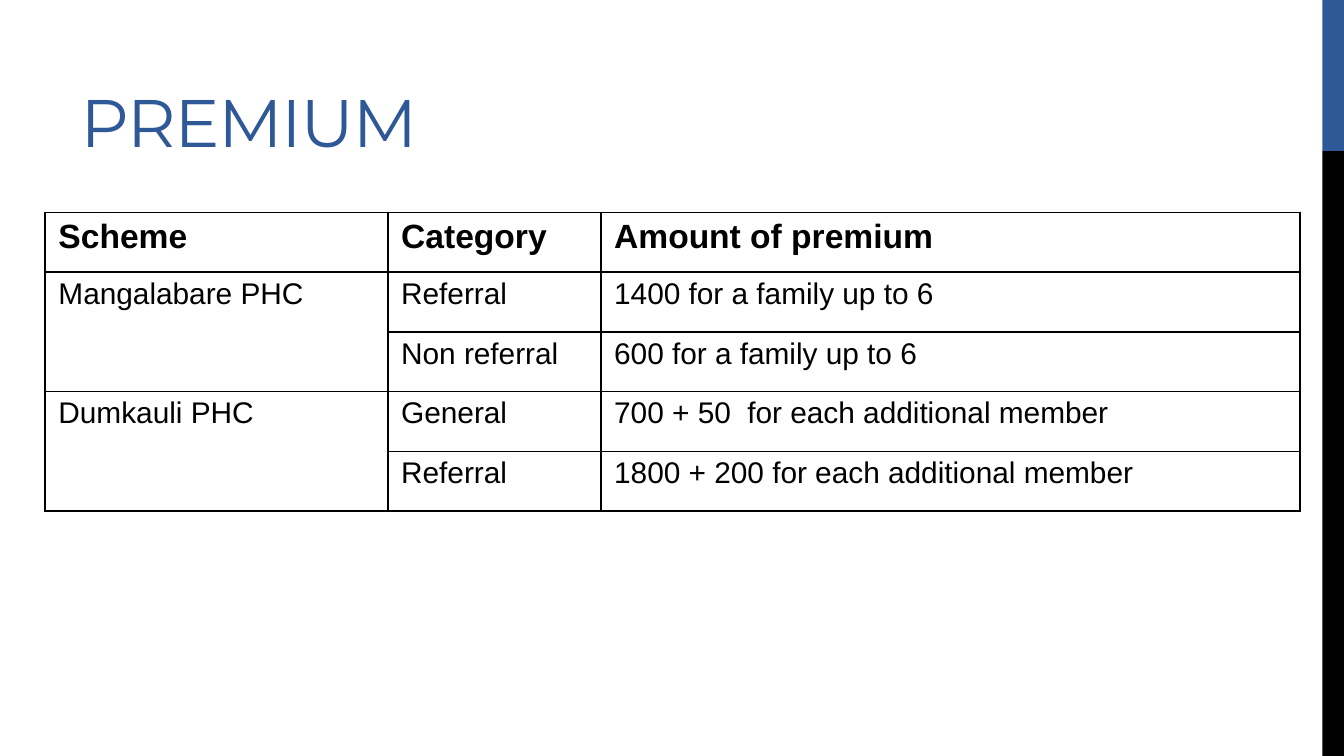
from pptx import Presentation
from pptx.dml.color import RGBColor
from pptx.enum.shapes import MSO_SHAPE as Shape
from pptx.enum.text import MSO_ANCHOR as Anchor, PP_ALIGN as Align
from pptx.oxml import parse_xml
from pptx.oxml.ns import nsdecls
from pptx.util import Pt

SCALE = 4572
BLUE = RGBColor(0x2F, 0x58, 0x97)
BLACK = RGBColor(0, 0, 0)

PREMIUMS = [
    ("Scheme", "Category", "Amount of premium"),
    ("Mangalabare PHC", "Referral", "1400 for a family up to 6"),
    ("", "Non referral", "600 for a family up to 6"),
    ("Dumkauli PHC", "General", "700 + 50  for each additional member"),
    ("", "Referral", "1800 + 200 for each additional member"),
]


def px(*lengths):
    return [length * SCALE for length in lengths]


class SlideBuilder:
    """Builds one slide in a shared style, with lengths in px."""

    title_font = "Montserrat"
    body_font = "Arial"

    def __init__(self, presentation):
        self.slide = presentation.slides.add_slide(presentation.slide_layouts[5])

    def bar(self, left, top, width, height, color):
        shape = self.slide.shapes.add_shape(Shape.RECTANGLE, *px(left, top, width, height))
        shape.shadow.inherit = False
        shape.fill.solid()
        shape.fill.fore_color.rgb = color
        shape.line.fill.background()

    def title(self, text, left, top, width, height):
        title = self.slide.shapes.title
        title.left, title.top, title.width, title.height = px(left, top, width, height)
        frame = title.text_frame
        frame.text = text
        frame.vertical_anchor = Anchor.BOTTOM
        paragraph = frame.paragraphs[0]
        paragraph.alignment = Align.LEFT
        self.style(paragraph, self.title_font, 36, BLUE)
        paragraph.runs[0].font._element.set("spc", "-60")

    def style(self, paragraph, name, size, color, bold=False):
        font = paragraph.font
        font.name, font.size, font.bold = name, Pt(size), bold
        font.color.rgb = color

    def borders(self, cell):
        properties = cell._tc.get_or_add_tcPr()
        for side in "LRTB":
            properties.append(parse_xml(
                f'<a:ln{side} {nsdecls("a")} w="{Pt(1)}"><a:solidFill>'
                f'<a:srgbClr val="{BLACK}"/></a:solidFill></a:ln{side}>'))

    def table(self, rows, left, top, widths, row_height, merged_rows):
        frame = self.slide.shapes.add_table(
            len(rows), len(widths), *px(left, top, sum(widths), row_height * len(rows)))
        table = frame.table
        table.first_row = table.horz_banding = False
        for column, width in zip(table.columns, px(*widths)):
            column.width = width
        for row_index, row in enumerate(rows):
            table.rows[row_index].height = row_height * SCALE
            header = row_index == 0
            for column_index, text in enumerate(row):
                cell = table.cell(row_index, column_index)
                self.borders(cell)
                cell.fill.background()
                cell.margin_left, cell.margin_right = px(20, 20)
                cell.margin_top, cell.margin_bottom = px(8, 8)
                cell.text = text
                paragraph = cell.text_frame.paragraphs[0]
                justified = header != (column_index == 2)
                paragraph.alignment = Align.JUSTIFY if justified else Align.LEFT
                self.style(paragraph, self.body_font, 18 if header else 16, BLACK, header)
        for first in merged_rows:
            table.cell(first, 0).merge(table.cell(first + 1, 0))


def main():
    presentation = Presentation()
    presentation.slide_width, presentation.slide_height = px(2000, 1125)
    builder = SlideBuilder(presentation)
    builder.bar(1968, 0, 32, 225, BLUE)
    builder.bar(1968, 225, 32, 900, BLACK)
    builder.title("PREMIUM", 100, 25, 1267, 225)
    builder.table(PREMIUMS, 67, 316, (510, 317, 1041), 89, (1, 3))
    presentation.save("out.pptx")


if __name__ == "__main__":
    main()
